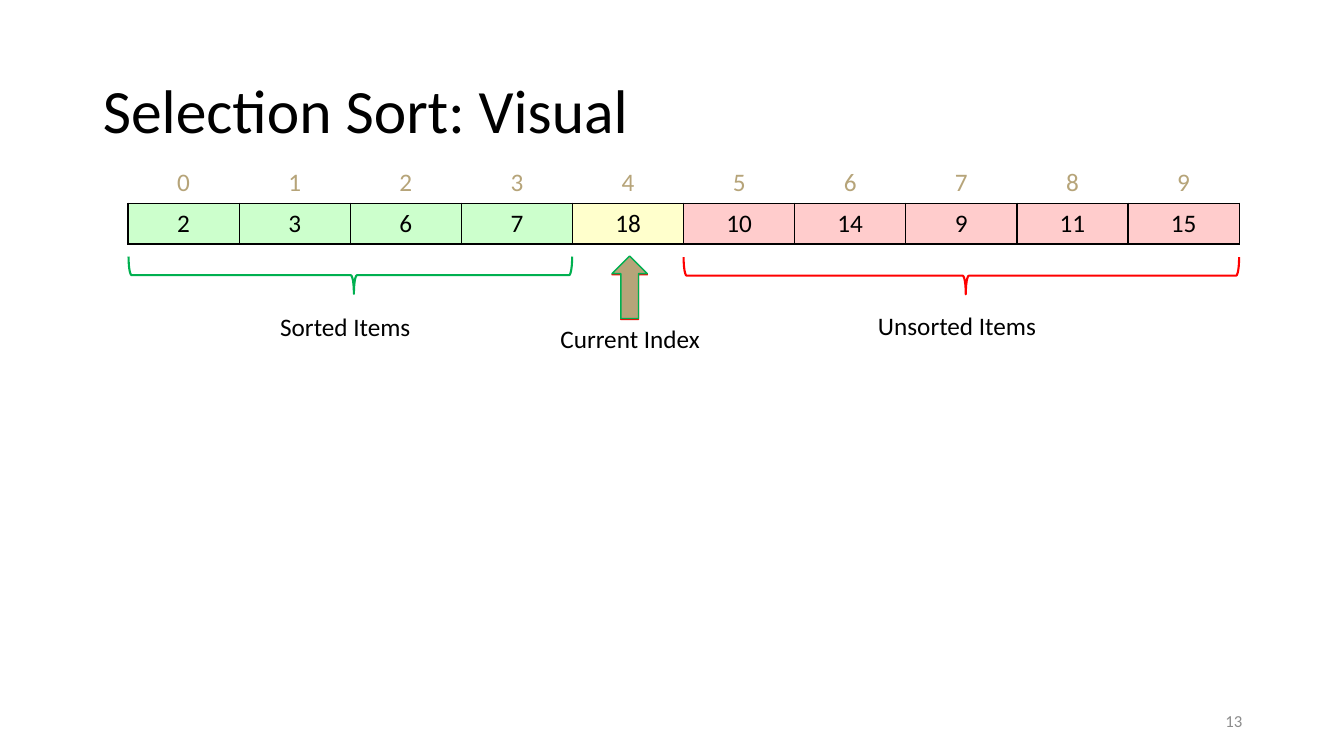
from lxml.etree import SubElement
from pptx import Presentation
from pptx.dml.color import RGBColor
from pptx.enum.shapes import MSO_SHAPE
from pptx.enum.text import MSO_ANCHOR, MSO_AUTO_SIZE, PP_ALIGN
from pptx.oxml.ns import qn
from pptx.util import Inches, Pt


def rgb(color):
    return RGBColor.from_string(color)


def write(tf, text, size, color, align=PP_ALIGN.LEFT):
    p = tf.paragraphs[0]
    p.alignment = align
    r = p.add_run()
    r.text = text
    font = {"name": "Calibri", "size": Pt(size), "bold": False}
    for key, value in font.items():
        setattr(r.font, key, value)
    r.font.color.rgb = rgb(color)
    return p


prs = Presentation()
prs.slide_width, prs.slide_height = Inches(13.33), Inches(7.5)
s = prs.slides.add_slide(prs.slide_layouts[5])

title = s.shapes.title
place = {"left": 0.92, "top": 0.4, "width": 11.5, "height": 1.45}
for key, value in place.items():
    setattr(title, key, Inches(value))
title.text_frame.vertical_anchor = MSO_ANCHOR.MIDDLE
write(title.text_frame, "Selection Sort: Visual", 44, "000000").line_spacing = 0.9

values = [2, 3, 6, 7, 18, 10, 14, 9, 11, 15]
fills = ["CCFFCC"] * 4 + ["FFFFCC"] + ["FFCCCC"] * 5
table = s.shapes.add_table(2, len(values), Inches(1.27), Inches(1.61),
                           Inches(11.02), Inches(0.81)).table
table.first_row = table.horz_banding = False
for col in table.columns:
    col.width = Inches(11.02 / len(values))
for row, numbers in enumerate([range(len(values)), values]):
    for col, number in enumerate(numbers):
        cell = table.cell(row, col)
        cell.vertical_anchor = MSO_ANCHOR.MIDDLE
        write(cell.text_frame, str(number), 18, ["B6A479", "000000"][row], PP_ALIGN.CENTER)
        tcPr = cell._tc.get_or_add_tcPr()
        for side in "LRTB":
            ln = SubElement(tcPr, qn(f"a:ln{side}"), w=str(Pt(1)))
            fill = SubElement(ln, qn("a:solidFill"))
            border = "000000" if row == 1 or side == "B" else "FFFFFF"
            SubElement(fill, qn("a:srgbClr"), val=border)
        if row == 0:
            cell.fill.background()
        else:
            cell.fill.solid()
            cell.fill.fore_color.rgb = rgb(fills[col])

brace, arrow = MSO_SHAPE.LEFT_BRACE, MSO_SHAPE.DOWN_ARROW
markers = [
    (brace, 3.29, 0.53, 0.37, 4.4, 270, (0.083, 0.508), None, "00B050", 1.5),
    (brace, 9.35, -0.02, 0.37, 5.51, 270, (0.083, 0.508), None, "FF0000", 1.5),
    (arrow, 6.07, 2.55, 0.35, 0.62, 180, (0.5, 0.5), "B6A479", "FF0000", 1),
    (arrow, 6.07, 2.54, 0.35, 0.62, 180, (0.5, 0.5), "B6A479", "00B050", 1),
]
for kind, x, y, w, h, turn, adjust, fill, line, weight in markers:
    sp = s.shapes.add_shape(kind, Inches(x), Inches(y), Inches(w), Inches(h))
    sp.shadow.inherit = False
    sp.rotation = turn
    for i, value in enumerate(adjust):
        sp.adjustments[i] = value
    if fill:
        sp.fill.solid()
        sp.fill.fore_color.rgb = rgb(fill)
    else:
        sp.fill.background()
    sp.line.color.rgb = rgb(line)
    sp.line.width = Pt(weight)

labels = [
    ("Sorted Items", 2.68, 3.04, 1.58),
    ("Unsorted Items", 8.61, 3.03, 1.86),
    ("Current Index", 5.46, 3.16, 1.6),
]
for text, x, y, w in labels:
    tf = s.shapes.add_textbox(Inches(x), Inches(y), Inches(w), Inches(0.4)).text_frame
    tf.word_wrap = False
    tf.auto_size = MSO_AUTO_SIZE.SHAPE_TO_FIT_TEXT
    write(tf, text, 18, "000000")

tf = s.shapes.add_textbox(Inches(9.42), Inches(6.95), Inches(3), Inches(0.4)).text_frame
tf.word_wrap = True
tf.vertical_anchor = MSO_ANCHOR.MIDDLE
write(tf, "13", 12, "8C8C8C", PP_ALIGN.RIGHT)

prs.save("out.pptx")
